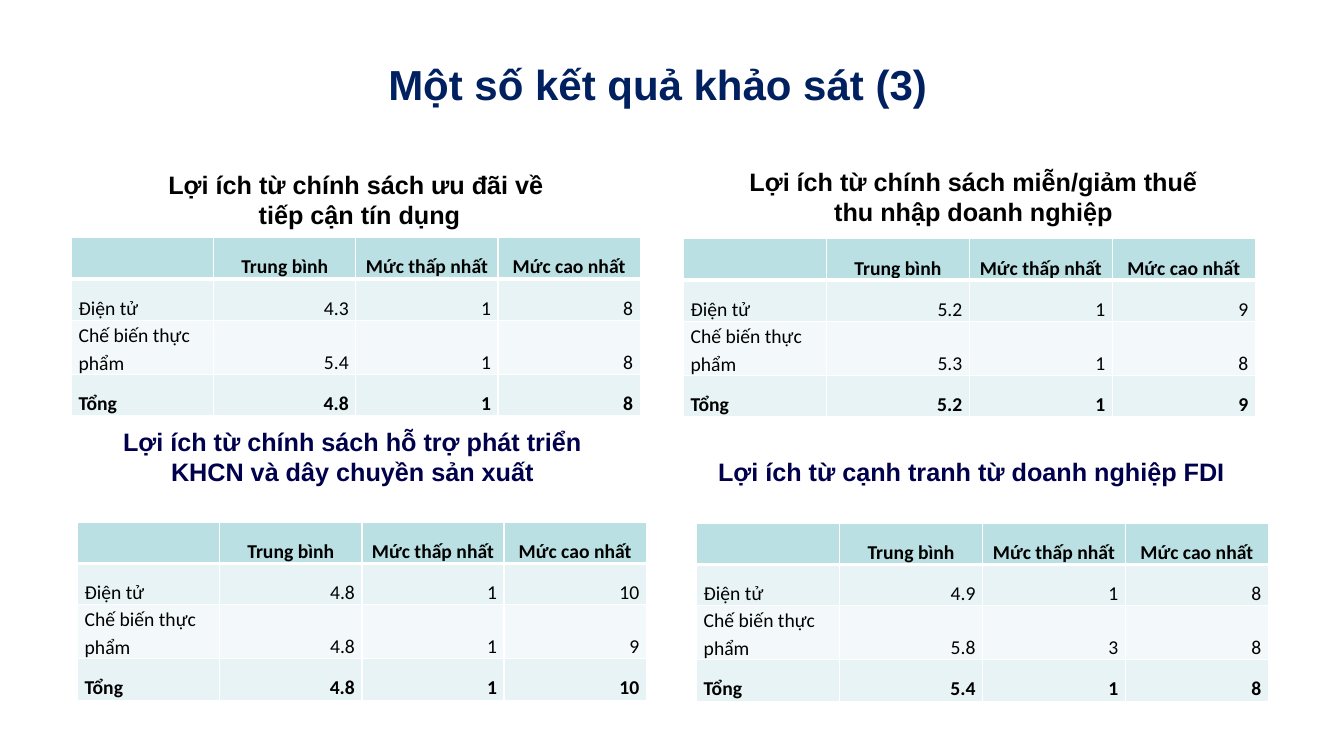
from lxml import etree
from pptx import Presentation
from pptx.dml.color import RGBColor
from pptx.enum import text as tx
from pptx.oxml import ns, parse_xml
from pptx.util import Inches, Pt

NAVY = RGBColor(0x00, 0x20, 0x60)
INDIGO = RGBColor(0x00, 0x00, 0x4C)
BLACK = RGBColor(0x00, 0x00, 0x00)
HEAD = RGBColor(0xBB, 0xE0, 0xE3)
BAND = RGBColor(0xE7, 0xF3, 0xF4)
PALE = RGBColor(0xF3, 0xF9, 0xFA)
WHITE = RGBColor(0xFF, 0xFF, 0xFF)

COLS = ["", "Trung bình", "Mức thấp nhất", "Mức cao nhất"]
ROWS = ["Điện tử", "Chế biến thực phẩm", "Tổng"]
FILLS = [HEAD, BAND, PALE, BAND]
ROW_H = 0.41

# heading lines, heading box, heading colour, table left, top, width, values
PANELS = [
    (["Lợi ích từ chính sách ưu đãi về ", "tiếp cận tín dụng"],
     (0.84, 1.84, 5.45, 0.49), BLACK, (0.71, 2.36, 5.64),
     [("4.3", "1", "8"), ("5.4", "1", "8"), ("4.8", "1", "8")]),
    (["Lợi ích từ chính sách miễn/giảm thuế thu nhập doanh nghiệp"],
     (7.14, 1.73, 5.03, 0.57), BLACK, (6.78, 2.37, 5.67),
     [("5.2", "1", "9"), ("5.3", "1", "8"), ("5.2", "1", "9")]),
    (["Lợi ích từ chính sách hỗ trợ phát triển KHCN và dây chuyền sản xuất"],
     (0.77, 4.39, 5.45, 0.49), INDIGO, (0.77, 5.18, 5.64),
     [("4.8", "1", "10"), ("4.8", "1", "9"), ("4.8", "1", "10")]),
    (["Lợi ích từ cạnh tranh từ doanh nghiệp FDI"],
     (6.91, 4.39, 5.45, 0.49), INDIGO, (6.91, 5.19, 5.67),
     [("4.9", "1", "8"), ("5.8", "3", "8"), ("5.4", "1", "8")]),
]


def style(run, name, size, color, bold=True):
    font = run.font
    font.name, font.size, font.bold = name, Pt(size), bold
    font.color.rgb = color


def add_text(slide, lines, box, size, color, anchor):
    """Place centred bold lines in a box and return its runs."""
    frame = slide.shapes.add_textbox(*map(Inches, box)).text_frame
    frame.word_wrap = True
    frame.vertical_anchor = anchor
    frame.text = "\n".join(lines)
    for para in frame.paragraphs:
        para.alignment = tx.PP_ALIGN.CENTER
        for run in para.runs:
            style(run, "Arial", size, color)
    return [run for para in frame.paragraphs for run in para.runs]


def add_title(slide, box):
    runs = add_text(slide, ["Một số kết quả khảo sát (3)"], box, 30, NAVY,
                    tx.MSO_ANCHOR.MIDDLE)
    shadow = parse_xml(
        f'<a:effectLst {ns.nsdecls("a")}><a:outerShdw blurRad="38100" '
        'dist="38100" dir="2700000" algn="tl"><a:srgbClr val="000000"/>'
        '</a:outerShdw></a:effectLst>')
    runs[0].font.fill  # keeps the fill ahead of the effect list
    props = runs[0].font._element
    props.find(ns.qn("a:solidFill")).addnext(shadow)


def add_edges(cell, top, bottom):
    """Draw white borders, one point wide at the sides."""
    props = cell._tc.get_or_add_tcPr()
    edges = {"lnL": 1, "lnR": 1, "lnT": top, "lnB": bottom}
    for spot, (tag, width) in enumerate(edges.items()):
        line = etree.Element(ns.qn(f"a:{tag}"), w=str(Pt(width)))
        fill = etree.SubElement(line, ns.qn("a:solidFill"))
        etree.SubElement(fill, ns.qn("a:srgbClr"), val=str(WHITE))
        props.insert(spot, line)


def fill_cell(cell, value, row, col):
    cell.fill.solid()
    cell.fill.fore_color.rgb = FILLS[row]
    cell.vertical_anchor = tx.MSO_ANCHOR.BOTTOM
    cell.margin_left = cell.margin_right = Inches(0.07)
    cell.margin_top = cell.margin_bottom = 0
    add_edges(cell, 3 if row == 1 else 1, 3 if row == 0 else 1)
    cell.text_frame.text = value
    para = cell.text_frame.paragraphs[0]
    para.line_spacing = 1.15
    para.space_after = Pt(3)
    if row == 0:
        para.alignment = tx.PP_ALIGN.CENTER
    elif col > 0:
        para.alignment = tx.PP_ALIGN.RIGHT
    for run in para.runs:
        style(run, "Calibri", 14, BLACK, row in (0, len(ROWS)))


def add_grid(slide, left, top, width, values):
    data = [COLS] + [[name, *nums] for name, nums in zip(ROWS, values)]
    table = slide.shapes.add_table(
        len(data), len(COLS), Inches(left), Inches(top), Inches(width),
        Inches(ROW_H * len(data))).table
    for row, line in enumerate(data):
        table.rows[row].height = Inches(ROW_H)
        for col, value in enumerate(line):
            fill_cell(table.cell(row, col), value, row, col)


def main():
    deck = Presentation()
    deck.slide_width, deck.slide_height = Inches(13.33), Inches(7.5)
    slide = deck.slides.add_slide(deck.slide_layouts[6])
    add_title(slide, (0, 0.4, 13.05, 0.87))
    for lines, box, color, place, values in PANELS:
        add_text(slide, lines, box, 18, color, tx.MSO_ANCHOR.BOTTOM)
        add_grid(slide, *place, values)
    deck.save("out.pptx")


if __name__ == "__main__":
    main()
